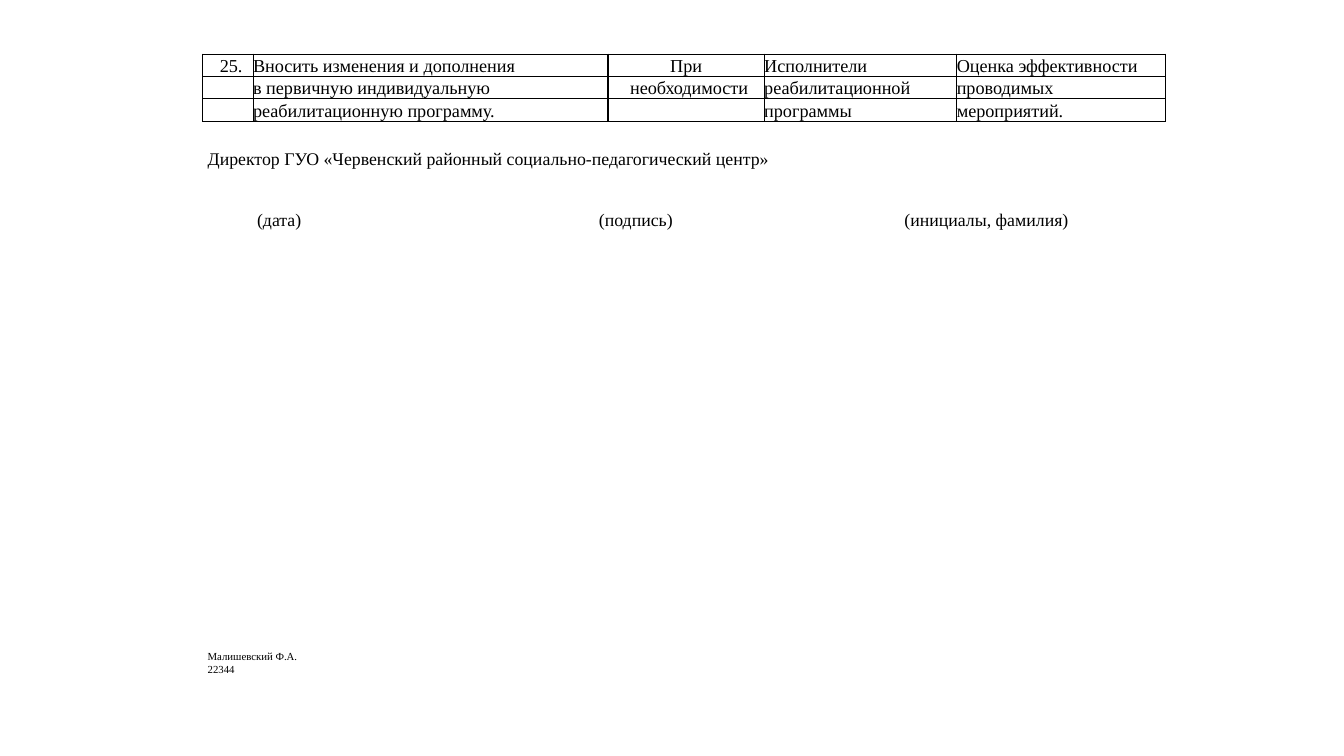
from pptx import Presentation
from pptx.dml.color import RGBColor
from pptx.enum.text import MSO_ANCHOR, PP_ALIGN
from pptx.oxml.ns import qn
from pptx.util import Inches, Pt
from lxml import etree

BOTTOM, CENTER = MSO_ANCHOR.BOTTOM, PP_ALIGN.CENTER

# Content
ROWS = [
    ("25.", "Вносить изменения и дополнения", "При", "Исполнители",
     "Оценка эффективности"),
    ("", "в первичную индивидуальную", "необходимости", "реабилитационной",
     "проводимых"),
    ("", "реабилитационную программу.", "", "программы", "мероприятий."),
]
COLS = (0.5, 3.52, 1.55, 1.91, 2.07)
HEIGHTS = (0.22, 0.22, 0.21)
INDENTS = {(0, 0): 0.17, (1, 2): 0.22}
CENTERED = {(0, 2)}
LEFT, TOP = 2.01, 0.54
MARGIN = 2.06
SIGN_TOP = 2.07
LABELS = [
    ("Директор ГУО «Червенский районный социально-педагогический центр»",
     MARGIN, 1.47, 5.6),
    ("(дата)", 2.55, SIGN_TOP, 0.47),
    ("(подпись)", 5.94, SIGN_TOP, 0.77),
    ("(инициалы, фамилия)", 8.97, SIGN_TOP, 1.65),
]
AUTHOR = "Малишевский Ф.А. 22344"

THEME = {
    "font": "Times New Roman", "ink": "000000",
    "cell": 13, "label": 12.7, "note": 7.7, "lead": 9.4,
    "thin": 0.75, "thick": 1.25,
}


def style(para, size):
    for run in para.runs:
        font = run.font
        font.name, font.size = THEME["font"], Pt(size)
        font.color.rgb = RGBColor.from_string(THEME["ink"])


def border(cell, widths):
    """Draw the four sides, given as tag: width in points."""
    props = cell._tc.get_or_add_tcPr()
    for spot, (side, width) in enumerate(widths.items()):
        line = etree.Element(qn("a:" + side), w=str(Pt(width)))
        fill = etree.SubElement(line, qn("a:solidFill"))
        etree.SubElement(fill, qn("a:srgbClr"), val=THEME["ink"])
        props.insert(spot, line)


def fill_cell(cell, text, row, col):
    cell.margin_left = cell.margin_right = 0
    cell.margin_top = cell.margin_bottom = 0
    cell.vertical_anchor = BOTTOM
    cell.fill.background()
    para = cell.text_frame.paragraphs[0]
    if text:
        para.text = text
        style(para, THEME["cell"])
    else:
        # Keep empty cells as low as the filled ones
        etree.SubElement(para._p, qn("a:endParaRPr"),
                         sz=str(THEME["cell"] * 100))
    if (row, col) in CENTERED:
        para.alignment = CENTER
    if (row, col) in INDENTS:
        props = para._p.get_or_add_pPr()
        props.set("marL", str(Inches(INDENTS[row, col])))
        props.set("indent", "0")
    thin, thick = THEME["thin"], THEME["thick"]
    border(cell, {
        "lnL": thick if col == 2 else thin,
        "lnR": thick if col == 1 else thin,
        "lnT": thick if row == 0 else thin,
        "lnB": thin,
    })


def add_text(slide, text, left, top, width, height, size, wrap=False):
    box = slide.shapes.add_textbox(
        Inches(left), Inches(top), Inches(width), Inches(height))
    frame = box.text_frame
    frame.margin_left = frame.margin_right = 0
    frame.margin_top = frame.margin_bottom = 0
    frame.word_wrap = wrap
    frame.text = text
    para = frame.paragraphs[0]
    style(para, size)
    return para


def main():
    deck = Presentation()
    deck.slide_width, deck.slide_height = Inches(13.33), Inches(7.5)
    slide = deck.slides.add_slide(deck.slide_layouts[6])

    # Programme table
    table = slide.shapes.add_table(
        len(ROWS), len(COLS), Inches(LEFT), Inches(TOP),
        Inches(sum(COLS)), Inches(sum(HEIGHTS))).table
    table.first_row = table.horz_banding = False
    for col, width in enumerate(COLS):
        table.columns[col].width = Inches(width)
    for row, texts in enumerate(ROWS):
        table.rows[row].height = Inches(HEIGHTS[row])
        for col, text in enumerate(texts):
            fill_cell(table.cell(row, col), text, row, col)

    # Signature labels
    for text, left, top, width in LABELS:
        add_text(slide, text, left, top, width, 0.2, THEME["label"])

    # Author note
    note = add_text(slide, AUTHOR, MARGIN, 6.44, 0.97, 0.24,
                    THEME["note"], wrap=True)
    note.line_spacing = Pt(THEME["lead"])

    deck.save("out.pptx")


if __name__ == "__main__":
    main()
